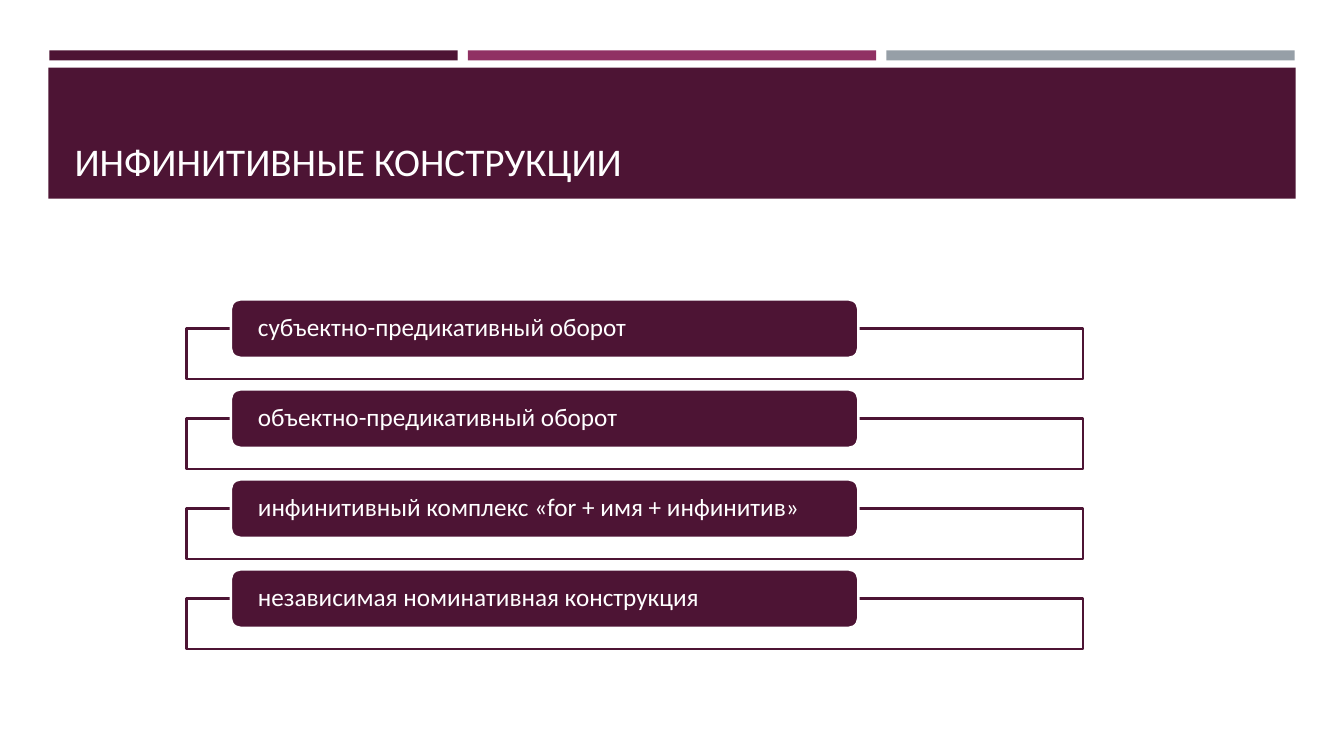
from lxml.etree import SubElement
from pptx import Presentation
from pptx.dml.color import RGBColor
from pptx.enum.shapes import MSO_SHAPE
from pptx.enum.text import MSO_ANCHOR, PP_ALIGN
from pptx.oxml.ns import qn
from pptx.util import Inches, Pt

PLUM, ROSE, GRAY, WHITE = "4D1434", "903163", "969FA7", "FFFFFF"
ITEMS = [
    "субъектно-предикативный оборот",
    "объектно-предикативный оборот",
    "инфинитивный комплекс «for + имя + инфинитив»",
    "независимая номинативная конструкция",
]


def color(code):
    """Turn a hex string into a colour."""
    return RGBColor.from_string(code)


def block(slide, kind, box, fill, line=None):
    """Draw a filled shape in the box, with an optional outline."""
    shape = slide.shapes.add_shape(kind, *[Inches(n) for n in box])
    shape.shadow.inherit = False
    shape.fill.solid()
    shape.fill.fore_color.rgb = color(fill)
    if line:
        shape.line.color.rgb = color(line)
        shape.line.width = Pt(1.75)
    else:
        shape.line.fill.background()
    return shape


def write(frame, text, size, anchor):
    """Put one left-aligned white run into a frame."""
    frame.word_wrap = True
    frame.vertical_anchor = anchor
    para = frame.paragraphs[0]
    para.alignment = PP_ALIGN.LEFT
    run = para.add_run()
    run.text = text
    run.font.name = "Calibri"
    run.font.size = Pt(size)
    run.font.color.rgb = color(WHITE)
    return para


def stripes(slide, left, top, width, height, gap=0.1):
    """Draw three equal stripes across the box."""
    size = (width - 2 * gap) / 3
    for i, fill in enumerate([PLUM, ROSE, GRAY]):
        spot = (left + i * (size + gap), top, size, height)
        block(slide, MSO_SHAPE.RECTANGLE, spot, fill)


def header(slide, left, top, width, height, text):
    """Draw the title band and set the title inside it."""
    band = block(slide, MSO_SHAPE.RECTANGLE, (left, top, width, height), PLUM)
    title = slide.shapes.title
    band.element.addnext(title.element)
    title.left, title.top = Inches(left + 0.16), Inches(top + 0.1)
    title.width, title.height = Inches(width - 0.31), Inches(height - 0.19)
    write(title.text_frame, text, 28, MSO_ANCHOR.BOTTOM)


def entry(slide, left, top, width, text):
    """Draw one outlined frame with a label over its top edge."""
    frame = block(slide, MSO_SHAPE.RECTANGLE,
                  (left, top + 0.29, width, 0.5), WHITE, PLUM)
    tint = frame.element.spPr.find(qn("a:solidFill"))[0]
    SubElement(tint, qn("a:alpha"), val="90000")
    label = block(slide, MSO_SHAPE.ROUNDED_RECTANGLE,
                  (left + 0.44, top, width * 0.7, 0.58), PLUM, WHITE)
    body = label.text_frame
    body.margin_left = body.margin_right = Inches(0.24)
    body.margin_top = body.margin_bottom = 0
    para = write(body, text, 18, MSO_ANCHOR.MIDDLE)
    para.line_spacing = 0.9


def entries(slide, left, top, width, step, items):
    """Stack the entries at an equal step."""
    for i, text in enumerate(items):
        entry(slide, left, top + i * step, width, text)


def main():
    """Build the slide and save it."""
    deck = Presentation()
    deck.slide_width, deck.slide_height = Inches(13.33), Inches(7.5)
    slide = deck.slides.add_slide(deck.slide_layouts[5])
    stripes(slide, 0.49, 0.5, 12.35, 0.1)
    header(slide, 0.48, 0.67, 12.37, 1.3, "ИНФИНИТИВНЫЕ КОНСТРУКЦИИ")
    entries(slide, 1.85, 2.97, 8.89, 0.893, ITEMS)
    deck.save("out.pptx")


if __name__ == "__main__":
    main()
